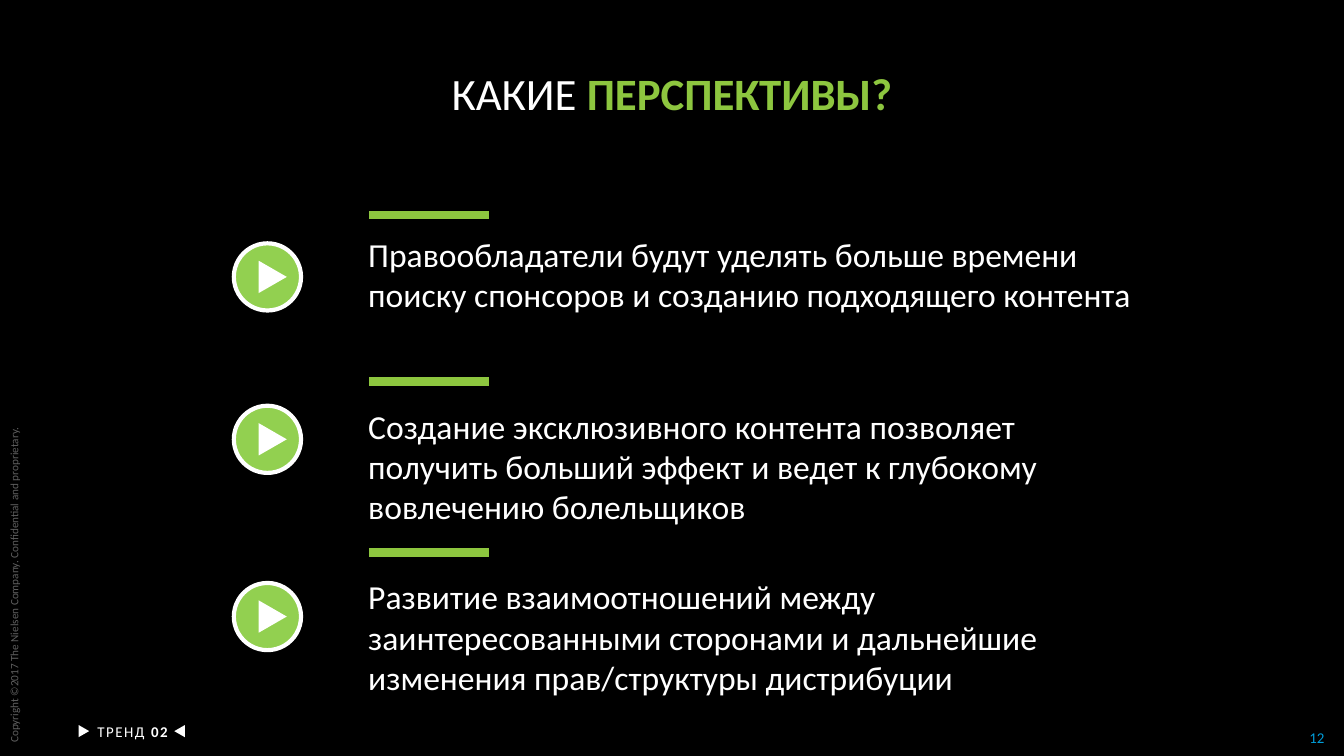
from typing import NamedTuple

from lxml import etree
from pptx import Presentation
from pptx.dml.color import RGBColor
from pptx.enum.shapes import MSO_CONNECTOR, MSO_SHAPE
from pptx.enum.text import MSO_ANCHOR, PP_ALIGN
from pptx.oxml.ns import qn
from pptx.util import Cm, Pt

OVAL, TRIANGLE = MSO_SHAPE.OVAL, MSO_SHAPE.ISOSCELES_TRIANGLE
STRAIGHT = MSO_CONNECTOR.STRAIGHT
LEFT, CENTER = PP_ALIGN.LEFT, PP_ALIGN.CENTER
TOP, MIDDLE = MSO_ANCHOR.TOP, MSO_ANCHOR.MIDDLE

BLACK = RGBColor(0x00, 0x00, 0x00)
WHITE = RGBColor(0xFF, 0xFF, 0xFF)
GREEN = RGBColor(0x8D, 0xC6, 0x3F)
BUTTON_GREEN = RGBColor(0x92, 0xD0, 0x50)
GRAY = RGBColor(0x5F, 0x5F, 0x5F)
BLUE = RGBColor(0x00, 0x9D, 0xD9)

POINT_RIGHT, POINT_LEFT = 90, 270


class Box(NamedTuple):
    """Left, top, width and height in centimetres."""
    left: float
    top: float
    width: float
    height: float

    def lengths(self) -> list[Cm]:
        return [Cm(value) for value in self]


class Prospect(NamedTuple):
    bar_y: float
    button_top: float
    text_box: Box
    text: str


PROSPECTS = [
    Prospect(4.06, 4.6, Box(6.71, 4.29, 15.37, 1.8),
             "Правообладатели будут уделять больше времени поиску спонсоров "
             "и созданию подходящего контента"),
    Prospect(7.21, 7.67, Box(6.71, 7.54, 15.01, 2.57),
             "Создание эксклюзивного контента позволяет получить больший эффект "
             "и ведет к глубокому вовлечению болельщиков"),
    Prospect(10.44, 11.02, Box(6.71, 10.77, 15.37, 3.99),
             "Развитие взаимоотношений между заинтересованными сторонами "
             "и дальнейшие изменения прав/структуры дистрибуции"),
]


def add_text(slide, box: Box, text: str, size: float, color: RGBColor = WHITE,
             align=LEFT, anchor=TOP, inset: bool = True, wrap: bool = True):
    shape = slide.shapes.add_textbox(*box.lengths())
    frame = shape.text_frame
    frame.word_wrap = wrap
    frame.vertical_anchor = anchor
    if not inset:
        frame.margin_left = frame.margin_right = Cm(0)
        frame.margin_top = frame.margin_bottom = Cm(0)
    paragraph = frame.paragraphs[0]
    paragraph.alignment = align
    paragraph.font.name = "Calibri"
    paragraph.font.size = Pt(size)
    paragraph.font.color.rgb = color
    paragraph.add_run().text = text
    return shape


def add_bold_run(shape, text: str):
    run = shape.text_frame.paragraphs[0].add_run()
    run.text = text
    run.font.bold = True
    return run


def add_solid(slide, kind, box: Box, color: RGBColor, rotation: float = 0):
    shape = slide.shapes.add_shape(kind, *box.lengths())
    shape.shadow.inherit = False
    shape.rotation = rotation
    shape.fill.solid()
    shape.fill.fore_color.rgb = color
    shape.line.fill.background()
    return shape


def add_play_button(slide, top: float) -> None:
    circle = add_solid(slide, OVAL, Box(4.42, top, 1.27, 1.27), BUTTON_GREEN)
    circle.line.color.rgb = WHITE
    circle.line.width = Pt(2.25)
    add_solid(slide, TRIANGLE, Box(4.85, top + 0.37, 0.61, 0.53), WHITE, POINT_RIGHT)


def add_bar(slide, y: float) -> None:
    bar = slide.shapes.add_connector(STRAIGHT, Cm(6.98), Cm(y), Cm(9.25), Cm(y))
    bar.line.color.rgb = GREEN
    bar.line.width = Pt(4.5)
    etree.SubElement(bar._element.spPr, qn("a:effectLst"))


def main() -> None:
    presentation = Presentation()
    presentation.slide_width = Cm(25.4)
    presentation.slide_height = Cm(14.29)
    slide = presentation.slides.add_slide(presentation.slide_layouts[6])
    slide.background.fill.solid()
    slide.background.fill.fore_color.rgb = BLACK

    # Page number and copyright line
    add_text(slide, Box(24.61, 13.77, 0.56, 0.33), "12", 8, BLUE, CENTER, MIDDLE,
             inset=False, wrap=False)
    copyright_line = add_text(
        slide, Box(-3.05, 10.72, 6.63, 0.51),
        "Copyright ©2017 The Nielsen Company. Confidential and proprietary.",
        6, GRAY, anchor=MIDDLE)
    copyright_line.rotation = 270

    # Title
    title = add_text(slide, Box(0, 1.35, 25.4, 0.91), "КАКИЕ ", 24, align=CENTER,
                     inset=False)
    title.text_frame.paragraphs[0].line_spacing = 0.9
    add_bold_run(title, "ПЕРСПЕКТИВЫ?").font.color.rgb = GREEN

    # Trend label between two arrowheads
    label = add_text(slide, Box(1.5, 13.54, 2.01, 0.61), "ТРЕНД ", 8, align=CENTER)
    add_bold_run(label, "02")
    for run in label.text_frame.paragraphs[0].runs:
        run._r.get_or_add_rPr().set("spc", "80")
    add_solid(slide, TRIANGLE, Box(1.47, 13.72, 0.23, 0.2), WHITE, POINT_RIGHT)
    add_solid(slide, TRIANGLE, Box(3.28, 13.72, 0.23, 0.2), WHITE, POINT_LEFT)

    # Prospects
    for prospect in PROSPECTS:
        add_bar(slide, prospect.bar_y)
        add_play_button(slide, prospect.button_top)
        add_text(slide, prospect.text_box, prospect.text, 18)

    presentation.save("out.pptx")


if __name__ == "__main__":
    main()
